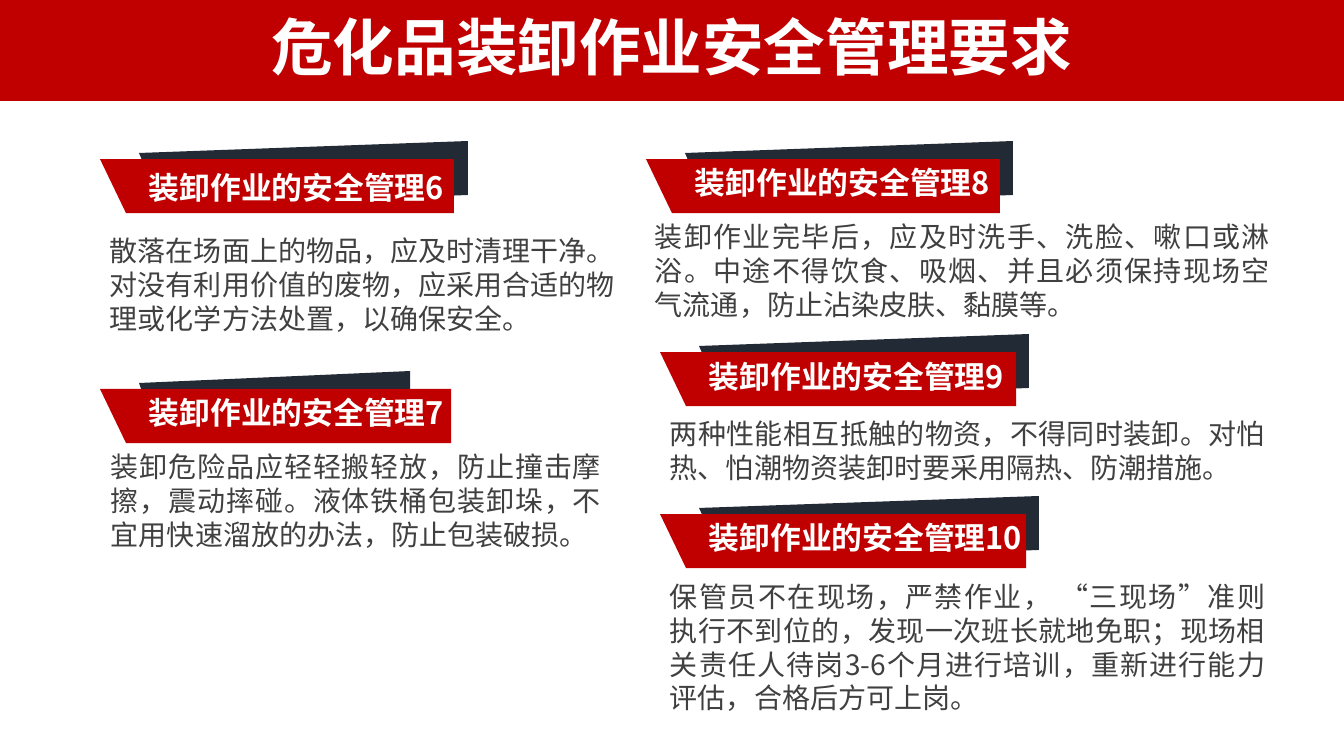
from lxml import etree
from pptx import Presentation
from pptx.dml.color import RGBColor
from pptx.enum.lang import MSO_LANGUAGE_ID
from pptx.enum.shapes import MSO_SHAPE
from pptx.enum.text import PP_ALIGN
from pptx.oxml.ns import qn
from pptx.util import Pt

RECTANGLE = MSO_SHAPE.RECTANGLE
LEFT, CENTER, JUSTIFY = PP_ALIGN.LEFT, PP_ALIGN.CENTER, PP_ALIGN.JUSTIFY
CHINESE = MSO_LANGUAGE_ID.SIMPLIFIED_CHINESE

SLIDE_WIDTH, SLIDE_HEIGHT = 1344, 756
EMU_PER_PX = 12192000 / SLIDE_WIDTH
FONT = "Noto Sans CJK SC"
RED, NAVY, WHITE, GRAY = "C00000", "222A35", "FFFFFF", "404040"

BANNER_HEIGHT, BANNER_SLANT = 54, 26
BACKING_INDENT, BACKING_RISE = 39, 18
HEADING_HEIGHT = 47

# Banner left, top, width; backing width, slant; number; heading drop;
# body box (left, top, width, height), alignment, text
SECTIONS = [
    (100, 159, 354, 329, 23, 6, 5, (100, 229, 537, 112), LEFT,
     "散落在场面上的物品，应及时清理干净。对没有利用价值的废物，应采用合适的物理或化学方法处置，以确保安全。"),
    (100, 389, 351, 271, 19, 7, 0, (101, 445, 510, 112), JUSTIFY,
     "装卸危险品应轻轻搬轻放，防止撞击摩擦，震动摔碰。液体铁桶包装卸垛，不宜用快速溜放的办法，防止包装破损。"),
    (646, 159, 354, 328, 23, 8, 0, (645, 215, 635, 112), JUSTIFY,
     "装卸作业完毕后，应及时洗手、洗脸、嗽口或淋浴。中途不得饮食、吸烟、并且必须保持现场空气流通，防止沾染皮肤、黏膜等。"),
    (660, 352, 356, 330, 24, 9, 1, (660, 412, 615, 78), JUSTIFY,
     "两种性能相互抵触的物资，不得同时装卸。对怕热、怕潮物资装卸时要采用隔热、防潮措施。"),
    (660, 514, 366, 340, 25, 10, 0, (660, 575, 615, 146), JUSTIFY,
     "保管员不在现场，严禁作业， “三现场”准则执行不到位的，发现一次班长就地免职；现场相关责任人待岗3-6个月进行培训，重新进行能力评估，合格后方可上岗。"),
]


def px(length):
    return round(length * EMU_PER_PX)


def color(value):
    return RGBColor.from_string(value)


def paint(shape, fill):
    shape.shadow.inherit = False
    shape.fill.solid()
    shape.fill.fore_color.rgb = color(fill)
    shape.line.fill.background()


def add_text(slide, box, text, size, text_color, bold=False, align=LEFT):
    text_frame = slide.shapes.add_textbox(*map(px, box)).text_frame
    text_frame.word_wrap = True
    text_frame.text = text
    paragraph = text_frame.paragraphs[0]
    paragraph.alignment = align
    for run in paragraph.runs:
        font = run.font
        font.name, font.size, font.bold = FONT, Pt(size), bold
        font.language_id = CHINESE
        font.color.rgb = color(text_color)
        # East Asian characters take their font from a separate element
        properties = run._r.get_or_add_rPr()
        etree.SubElement(properties, qn("a:ea")).set("typeface", FONT)
    return paragraph


def add_polygon(slide, points, fill):
    builder = slide.shapes.build_freeform(*points[0], scale=EMU_PER_PX)
    builder.add_line_segments(points[1:], close=True)
    paint(builder.convert_to_shape(), fill)


def add_title_bar(slide, width, height, title):
    bar = slide.shapes.add_shape(RECTANGLE, 0, 0, px(width), px(height))
    paint(bar, RED)
    paragraph = add_text(slide, (0, 12, width, 78), title, 44, WHITE, True, CENTER)
    paragraph.line_spacing = 0.9


def add_banner(slide, left, top, width, backing_width, backing_slant):
    # Dark tilted backing
    start, upper = left + BACKING_INDENT, top - BACKING_RISE
    end = start + backing_width
    add_polygon(slide, [(start, upper + 12), (end, upper), (end, upper + 54),
                        (start + backing_slant, upper + 66)], NAVY)
    # Red front with a slanted left end
    right, bottom = left + width, top + BANNER_HEIGHT
    add_polygon(slide, [(left, top), (right, top), (right, bottom),
                        (left + BANNER_SLANT, bottom)], RED)


def add_section(slide, left, top, width, backing_width, backing_slant,
                number, heading_drop, body_box, align, body):
    add_banner(slide, left, top, width, backing_width, backing_slant)
    heading_box = (left + BACKING_INDENT, top + heading_drop, width + 30, HEADING_HEIGHT)
    add_text(slide, heading_box, f"装卸作业的安全管理{number}", 22, WHITE, True)
    add_text(slide, body_box, body, 20, GRAY, align=align)


def main():
    presentation = Presentation()
    presentation.slide_width = px(SLIDE_WIDTH)
    presentation.slide_height = px(SLIDE_HEIGHT)
    slide = presentation.slides.add_slide(presentation.slide_layouts[6])
    add_title_bar(slide, SLIDE_WIDTH, 101, "危化品装卸作业安全管理要求")
    for section in SECTIONS:
        add_section(slide, *section)
    presentation.save("out.pptx")


if __name__ == "__main__":
    main()
